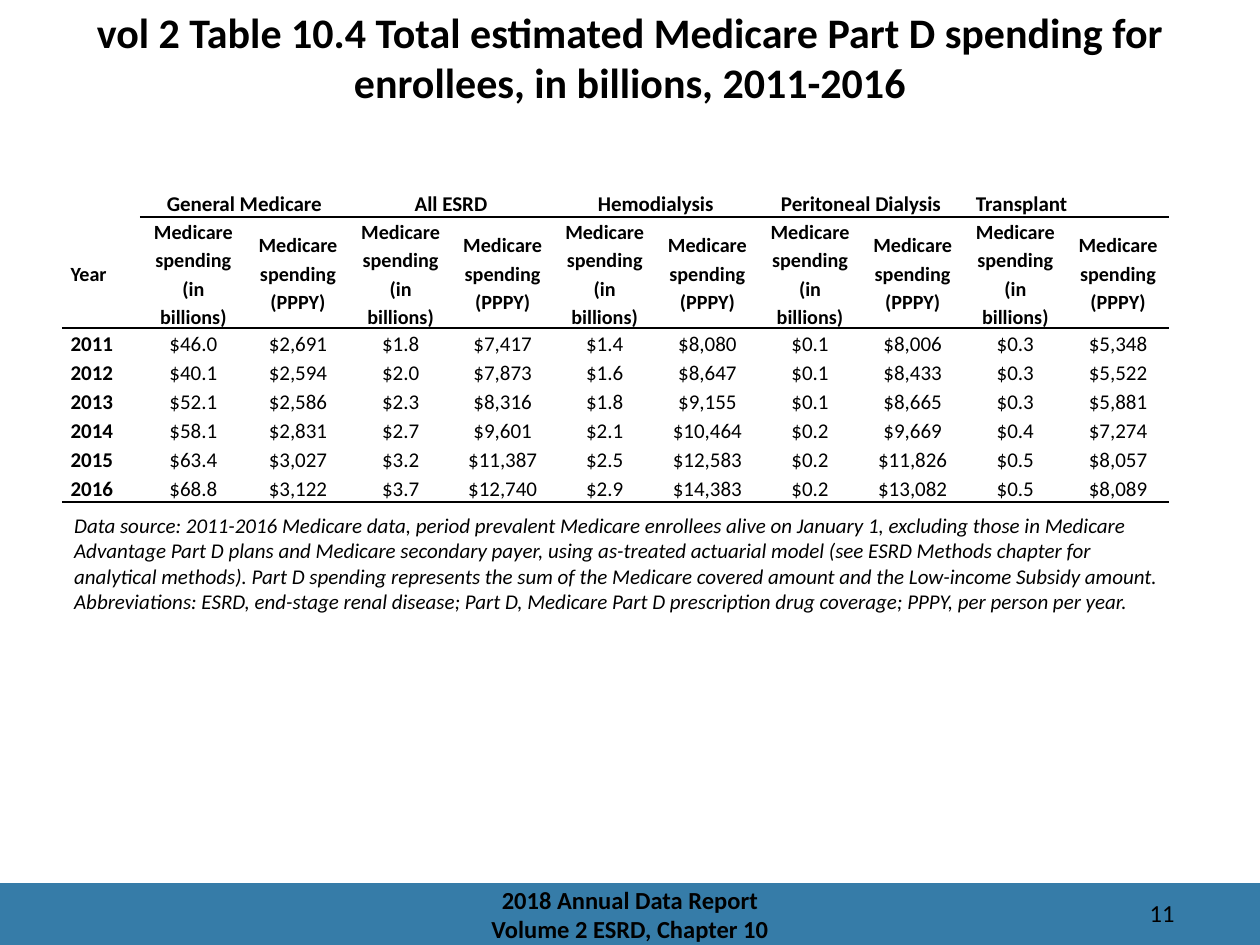
"""Build a slide with a table of Medicare Part D spending by treatment group."""
from lxml.etree import SubElement
from pptx import Presentation
from pptx.dml.color import RGBColor
from pptx.enum.shapes import MSO_SHAPE as Shape
from pptx.enum.text import MSO_ANCHOR as Anchor, PP_ALIGN as Align
from pptx.oxml.ns import qn
from pptx.util import Inches, Pt

COLORS = {"text": "000000", "band": "367CA8", "cell": "FFFFFF"}
FONT = "Calibri"
NO_GRID_STYLE = "{2D5ABB26-0587-4C30-8999-92F81FD0307C}"


def format_text(frame, size, align, bold=False, italic=False):
    for para in frame.paragraphs:
        para.alignment = align
        for span in para.runs:
            span.font.name = FONT
            span.font.size = Pt(size)
            span.font.bold = bold
            span.font.italic = italic
            span.font.color.rgb = RGBColor.from_string(COLORS["text"])


def add_bottom_border(cell):
    line = SubElement(cell._tc.get_or_add_tcPr(), qn("a:lnB"), w=str(Pt(1)))
    fill = SubElement(line, qn("a:solidFill"))
    SubElement(fill, qn("a:srgbClr"), val=COLORS["text"])


deck = Presentation()
deck.slide_width, deck.slide_height = Inches(10), Inches(7.5)
page = deck.slides.add_slide(deck.slide_layouts[6])

band = page.shapes.add_shape(Shape.RECTANGLE, 0, Inches(7.01), Inches(10), Inches(0.49))
band.shadow.inherit = False
band.fill.solid()
band.fill.fore_color.rgb = RGBColor.from_string(COLORS["band"])
band.line.fill.background()

title = "vol 2 Table 10.4 Total estimated Medicare Part D spending for enrollees, in billions, 2011-2016"
footer = "2018 Annual Data Report\vVolume 2 ESRD, Chapter 10"
note = (
    "Data source: 2011-2016 Medicare data, period prevalent Medicare enrollees alive on January 1, "
    "excluding those in Medicare Advantage Part D plans and Medicare secondary payer, using as-treated "
    "actuarial model (see ESRD Methods chapter for analytical methods). Part D spending represents the "
    "sum of the Medicare covered amount and the Low-income Subsidy amount. Abbreviations: ESRD, end-stage "
    "renal disease; Part D, Medicare Part D prescription drug coverage; PPPY, per person per year."
)
text_boxes = [
    ("11", (8.42, 7.08, 1, 0.3), Anchor.TOP, 14, Align.RIGHT, False, False),
    (footer, (3.31, 7.01, 3.38, 0.49), Anchor.MIDDLE, 14, Align.CENTER, True, False),
    (title, (0, 0, 10, 0.88), Anchor.TOP, 24, Align.CENTER, True, False),
    (note, (0.49, 4.02, 8.81, 1.21), Anchor.TOP, 12, Align.LEFT, False, True),
]
for text, place, anchor, size, align, bold, italic in text_boxes:
    box = page.shapes.add_textbox(*map(Inches, place))
    frame = box.text_frame
    frame.word_wrap = True
    frame.vertical_anchor = anchor
    frame.paragraphs[0].text = text
    format_text(frame, size, align, bold, italic)

groups = ["General Medicare", "All ESRD", "Hemodialysis", "Peritoneal Dialysis", "Transplant"]
measures = ["Medicare spending (in billions)", "Medicare spending (PPPY)"]
spending = [
    ["2011", "$46.0", "$2,691", "$1.8", "$7,417", "$1.4", "$8,080", "$0.1", "$8,006", "$0.3", "$5,348"],
    ["2012", "$40.1", "$2,594", "$2.0", "$7,873", "$1.6", "$8,647", "$0.1", "$8,433", "$0.3", "$5,522"],
    ["2013", "$52.1", "$2,586", "$2.3", "$8,316", "$1.8", "$9,155", "$0.1", "$8,665", "$0.3", "$5,881"],
    ["2014", "$58.1", "$2,831", "$2.7", "$9,601", "$2.1", "$10,464", "$0.2", "$9,669", "$0.4", "$7,274"],
    ["2015", "$63.4", "$3,027", "$3.2", "$11,387", "$2.5", "$12,583", "$0.2", "$11,826", "$0.5", "$8,057"],
    ["2016", "$68.8", "$3,122", "$3.7", "$12,740", "$2.9", "$14,383", "$0.2", "$13,082", "$0.5", "$8,089"],
]
group_row = [""]
for group in groups:
    group_row += [group, ""]
rows = [group_row, ["Year"] + measures * len(groups)] + spending
column_widths = [0.62, 0.85, 0.81, 0.82, 0.8, 0.82, 0.81, 0.82, 0.81, 0.82, 0.1, 0.71]
row_heights = [0.23, 0.88] + [0.23] * len(spending)
last_row = len(rows) - 1

table_frame = page.shapes.add_table(
    len(rows), len(column_widths), Inches(0.49), Inches(1.49), Inches(8.81), Inches(2.49))
table = table_frame.table
table.first_row = table.horz_banding = False
table._tbl.tblPr.find(qn("a:tableStyleId")).text = NO_GRID_STYLE
for column, width in zip(table.columns, column_widths):
    column.width = Inches(width)
for row, height in zip(table.rows, row_heights):
    row.height = Inches(height)

for start in range(1, 10, 2):
    table.cell(0, start).merge(table.cell(0, start + 1))
for row_index in range(1, len(rows)):
    table.cell(row_index, 10).merge(table.cell(row_index, 11))

for row_index, values in enumerate(rows):
    for column_index, value in enumerate(values + [""]):
        cell = table.cell(row_index, column_index)
        cell.margin_left = cell.margin_right = Inches(0.07)
        cell.margin_top = cell.margin_bottom = 0
        cell.vertical_anchor = Anchor.MIDDLE
        para = cell.text_frame.paragraphs[0]
        para.line_spacing = 1.15
        if value:
            para.text = value
        else:
            SubElement(para._p, qn("a:endParaRPr"), sz="1000")
        is_label = column_index == 0
        format_text(
            cell.text_frame,
            11.5 if row_index == 1 else 12,
            Align.LEFT if is_label else Align.CENTER,
            bold=is_label or row_index < 2,
        )
        if row_index in (1, last_row) or (row_index == 0 and not is_label):
            add_bottom_border(cell)
        cell.fill.solid()
        cell.fill.fore_color.rgb = RGBColor.from_string(COLORS["cell"])

deck.save("out.pptx")
